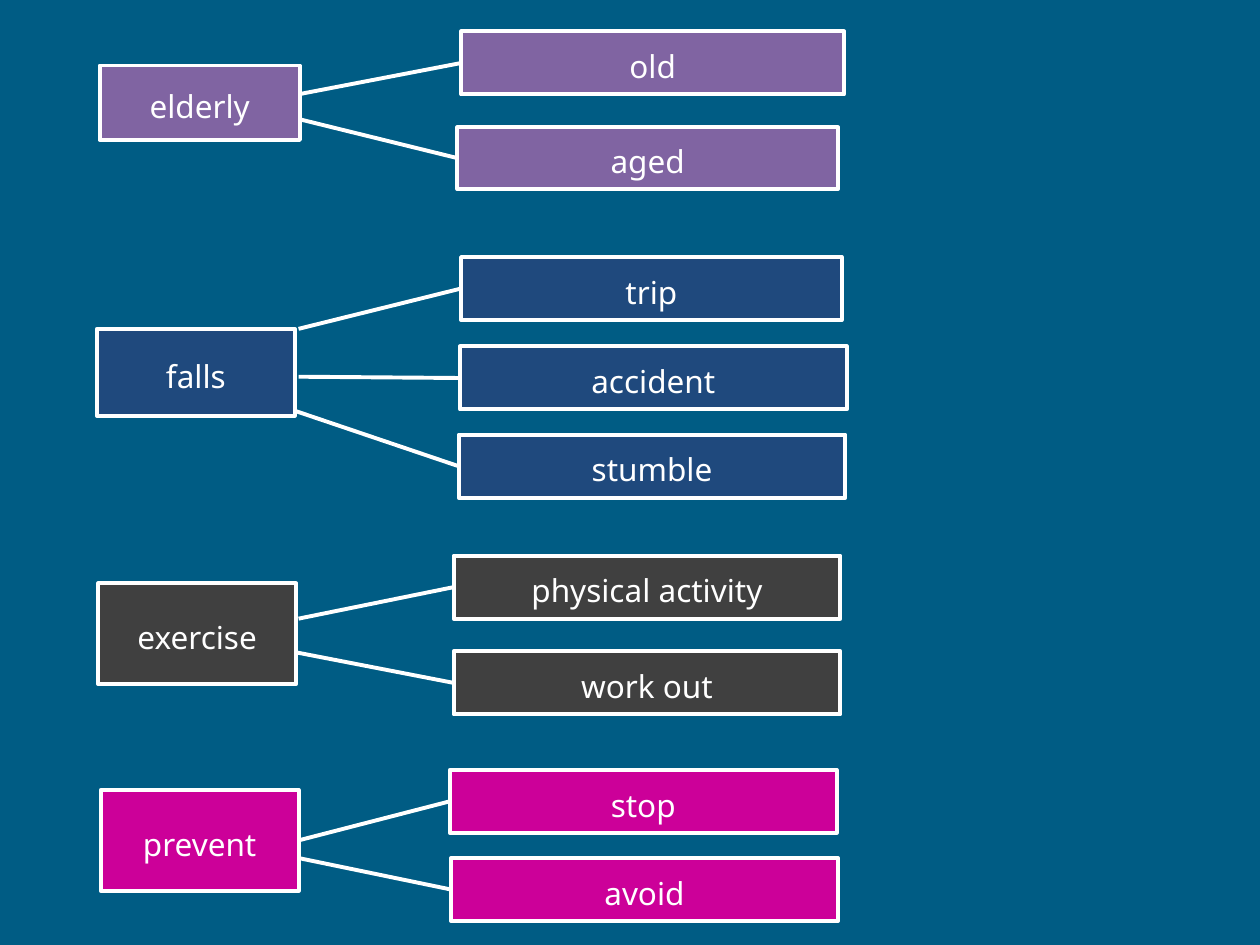
from dataclasses import dataclass

from pptx import Presentation
from pptx.dml.color import RGBColor
from pptx.enum.shapes import MSO_CONNECTOR, MSO_SHAPE
from pptx.enum.text import MSO_ANCHOR, PP_ALIGN
from pptx.oxml.ns import qn
from pptx.util import Inches, Pt
from lxml.etree import SubElement


@dataclass(frozen=True)
class Theme:
    """Colours, type and line weight of the slide."""
    background: str = "005C84"
    ink: str = "FFFFFF"
    elderly: str = "8064A2"
    falls: str = "1F497D"
    exercise: str = "404040"
    prevent: str = "CC0099"
    font: str = "Noto Sans"
    size: float = 18
    outline: float = 2.25


THEME = Theme()
LEFT_SIDE, RIGHT_SIDE = 1, 3
FRAME_FORMAT = {
    "word_wrap": True,
    "vertical_anchor": MSO_ANCHOR.MIDDLE,
    "margin_left": Inches(0.1),
    "margin_top": Inches(0.05),
    "margin_right": Inches(0.1),
    "margin_bottom": Inches(0),
}
FONT_FORMAT = {"name": THEME.font, "size": Pt(THEME.size)}

# Each synonym has its box and the start of its branch; None joins the keyword's side.
CONCEPTS = [
    ("elderly", (0.79, 0.52, 1.59, 0.59), [
        ("old", (3.66, 0.25, 3.04, 0.5), (2.36, 0.75)),
        ("aged", (3.63, 1.01, 3.02, 0.49), (2.31, 0.93)),
    ]),
    ("falls", (0.77, 2.61, 1.57, 0.69), [
        ("trip", (3.66, 2.04, 3.02, 0.5), (2.37, 2.61)),
        ("accident", (3.65, 2.75, 3.07, 0.5), (2.37, 2.99)),
        ("stumble", (3.64, 3.45, 3.07, 0.5), (2.31, 3.25)),
    ]),
    ("exercise", (0.78, 4.63, 1.57, 0.8), [
        ("physical activity", (3.6, 4.41, 3.07, 0.5), (2.37, 4.91)),
        ("work out", (3.6, 5.17, 3.07, 0.5), (2.31, 5.17)),
    ]),
    ("prevent", (0.8, 6.27, 1.57, 0.8), [
        ("stop", (3.57, 6.11, 3.07, 0.5), None),
        ("avoid", (3.58, 6.81, 3.07, 0.5), (2.37, 6.81)),
    ]),
]


def apply_format(target, values):
    """Set every attribute named in values on target."""
    for name, value in values.items():
        setattr(target, name, value)


def draw_outline(line):
    """Give a line the theme's colour and weight."""
    line.color.rgb = RGBColor.from_string(THEME.ink)
    line.width = Pt(THEME.outline)


def add_term(slide, term, box, colour):
    """Add a filled box with one centred term."""
    term_box = slide.shapes.add_shape(
        MSO_SHAPE.FLOWCHART_PROCESS, *map(Inches, box))
    term_box.shadow.inherit = False
    term_box.fill.solid()
    term_box.fill.fore_color.rgb = RGBColor.from_string(colour)
    draw_outline(term_box.line)
    apply_format(term_box.text_frame, FRAME_FORMAT)
    paragraph = term_box.text_frame.paragraphs[0]
    paragraph.alignment = PP_ALIGN.CENTER
    label = paragraph.add_run()
    label.text = term
    apply_format(label.font, FONT_FORMAT)
    label.font.color.rgb = RGBColor.from_string(THEME.ink)
    return term_box


def add_branch(slide, start, synonym_box):
    """Add a line from start to the left side of a synonym."""
    x, y = map(Inches, start)
    branch = slide.shapes.add_connector(MSO_CONNECTOR.STRAIGHT, x, y, x, y)
    branch.end_connect(synonym_box, LEFT_SIDE)
    draw_outline(branch.line)
    SubElement(branch._element.spPr, qn("a:effectLst"))
    return branch


def add_concept(slide, keyword, keyword_at, synonyms):
    """Add a keyword with a branch to each of its synonyms."""
    colour = getattr(THEME, keyword)
    left, top, width, height = keyword_at
    side_middle = (left + width, top + height / 2)
    joined = []
    for synonym, box, start in synonyms:
        synonym_box = add_term(slide, synonym, box, colour)
        branch = add_branch(slide, start or side_middle, synonym_box)
        if start is None:
            joined.append(branch)
    keyword_box = add_term(slide, keyword, keyword_at, colour)
    for branch in joined:
        branch.begin_connect(keyword_box, RIGHT_SIDE)


def main():
    """Build the synonym map and save it."""
    deck = Presentation()
    deck.slide_width, deck.slide_height = Inches(10), Inches(7.5)
    slide = deck.slides.add_slide(deck.slide_layouts[6])
    slide.background.fill.solid()
    slide.background.fill.fore_color.rgb = RGBColor.from_string(THEME.background)
    for keyword, keyword_at, synonyms in CONCEPTS:
        add_concept(slide, keyword, keyword_at, synonyms)
    deck.save("out.pptx")


if __name__ == "__main__":
    main()
